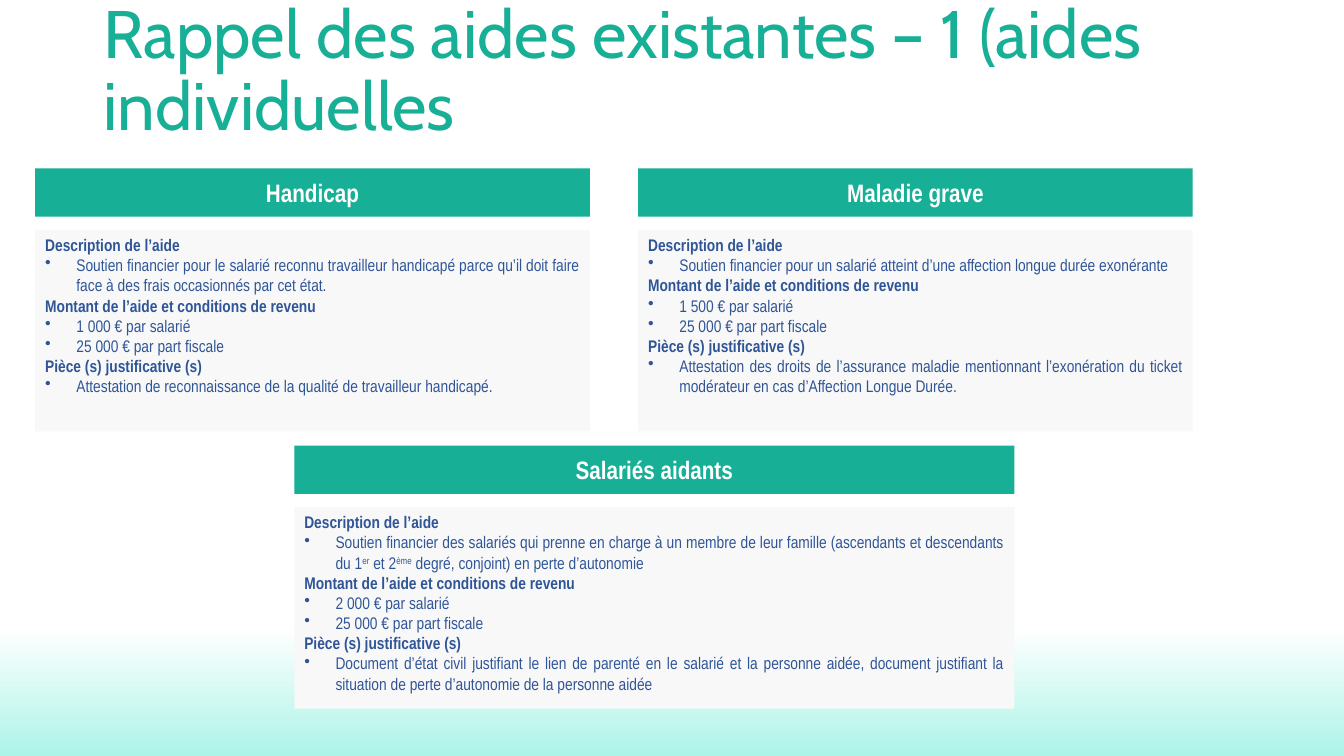
import lxml.etree
import pptx
import pptx.dml.color
import pptx.enum.shapes
import pptx.enum.text
import pptx.oxml.ns
import pptx.util

Inches = pptx.util.Inches
ALIGN = pptx.enum.text.PP_ALIGN
ANCHOR = pptx.enum.text.MSO_ANCHOR

COLORS = {
    "green": "17AF95",
    "panel": "F8F8F8",
    "blue": "2F5597",
    "white": "FFFFFF",
    "mint": "ACF4E8",
}

FORMATS = {
    "title": {"name": "Cabin", "size": pptx.util.Pt(48), "bold": False},
    "header": {"name": "Arial Narrow", "size": pptx.util.Pt(18), "bold": True},
    "label": {"name": "Arial Narrow", "size": pptx.util.Pt(12), "bold": True},
    "detail": {"name": "Arial Narrow", "size": pptx.util.Pt(12), "bold": False},
}

LABELS = [
    "Description de l’aide",
    "Montant de l’aide et conditions de revenu",
    "Pièce (s) justificative (s)",
]

INCOME_LIMIT = "25 000 € par part fiscale"

AIDS = [
    {
        "name": "Handicap",
        "box": (0.35, 1.67, 5.5),
        "details": [
            ["Soutien financier pour le salarié reconnu travailleur handicapé parce "
             "qu’il doit faire face à des frais occasionnés par cet état."],
            ["1 000 € par salarié", INCOME_LIMIT],
            ["Attestation de reconnaissance de la qualité de travailleur handicapé."],
        ],
    },
    {
        "name": "Maladie grave",
        "box": (6.33, 1.67, 5.5),
        "details": [
            ["Soutien financier pour un salarié atteint d’une affection longue durée "
             "exonérante"],
            ["1 500 € par salarié", INCOME_LIMIT],
            ["Attestation des droits de l’assurance maladie mentionnant l’exonération "
             "du ticket modérateur en cas d’Affection Longue Durée."],
        ],
    },
    {
        "name": "Salariés aidants",
        "box": (2.92, 4.42, 7.14),
        "details": [
            ["Soutien financier des salariés qui prenne en charge à un membre de leur "
             "famille (ascendants et descendants du 1^er^ et 2^ème^ degré, conjoint) "
             "en perte d’autonomie"],
            ["2 000 € par salarié", INCOME_LIMIT],
            ["Document d’état civil justifiant le lien de parenté en le salarié et la "
             "personne aidée, document justifiant la situation de perte d’autonomie "
             "de la personne aidée"],
        ],
    },
]


def rgb(color):
    """Return the named colour as an RGB value."""
    return pptx.dml.color.RGBColor.from_string(COLORS[color])


def write(paragraph, text, style, color, align):
    """Fill a paragraph, raising the parts between carets as superscript."""
    paragraph.alignment = align
    for index, part in enumerate(text.split("^")):
        run = paragraph.add_run()
        run.text = part
        for attribute, value in FORMATS[style].items():
            setattr(run.font, attribute, value)
        run.font.color.rgb = rgb(color)
        if index % 2:
            run._r.get_or_add_rPr().set("baseline", "30000")


def add_bullet(paragraph):
    """Give a paragraph a hanging round bullet."""
    properties = paragraph._p.get_or_add_pPr()
    properties.set("marL", str(Inches(0.31)))
    properties.set("indent", str(-Inches(0.31)))
    bullet = lxml.etree.SubElement(properties, pptx.oxml.ns.qn("a:buChar"))
    bullet.set("char", "•")


def add_panel(slide, left, top, width, height, color, anchor):
    """Add a plain filled rectangle and return its text frame."""
    shape = slide.shapes.add_shape(
        pptx.enum.shapes.MSO_SHAPE.RECTANGLE,
        Inches(left), Inches(top), Inches(width), Inches(height))
    shape.shadow.inherit = False
    shape.fill.solid()
    shape.fill.fore_color.rgb = rgb(color)
    shape.line.fill.background()
    shape.text_frame.word_wrap = True
    shape.text_frame.vertical_anchor = anchor
    return shape.text_frame


def add_background(slide):
    """Fade the foot of the slide from white to mint."""
    fill = slide.background.fill
    fill.gradient()
    fill.gradient_angle = 270
    stops = [(0.83, "white"), (1, "mint")]
    for stop, (position, color) in zip(fill.gradient_stops, stops):
        stop.position = position
        stop.color.rgb = rgb(color)


def add_title(slide, left, top, width, height):
    """Add the slide title in the given box."""
    shape = slide.shapes.add_textbox(
        Inches(left), Inches(top), Inches(width), Inches(height))
    frame = shape.text_frame
    frame.word_wrap = True
    frame.vertical_anchor = ANCHOR.MIDDLE
    paragraph = frame.paragraphs[0]
    paragraph.line_spacing = 0.9
    write(paragraph, "Rappel des aides existantes – 1 (aides individuelles",
          "title", "green", ALIGN.LEFT)


def add_aid(slide, name, details, left, top, width):
    """Add one aid: a header bar above a panel of labelled bullets."""
    header = add_panel(slide, left, top, width, 0.48, "green", ANCHOR.MIDDLE)
    write(header.paragraphs[0], name, "header", "white", ALIGN.CENTER)
    body = add_panel(slide, left, top + 0.61, width, 2, "panel", ANCHOR.TOP)
    paragraph = body.paragraphs[0]
    for label, items in zip(LABELS, details):
        if paragraph.runs:
            paragraph = body.add_paragraph()
        write(paragraph, label, "label", "blue", ALIGN.JUSTIFY)
        for item in items:
            paragraph = body.add_paragraph()
            add_bullet(paragraph)
            write(paragraph, item, "detail", "blue", ALIGN.JUSTIFY)


def main():
    """Build and save the slide."""
    presentation = pptx.Presentation()
    presentation.slide_width = Inches(13.33)
    presentation.slide_height = Inches(7.5)
    slide = presentation.slides.add_slide(presentation.slide_layouts[6])
    add_background(slide)
    add_title(slide, 0.93, 0.06, 11.5, 1.32)
    for aid in AIDS:
        add_aid(slide, aid["name"], aid["details"], *aid["box"])
    presentation.save("out.pptx")


if __name__ == "__main__":
    main()
